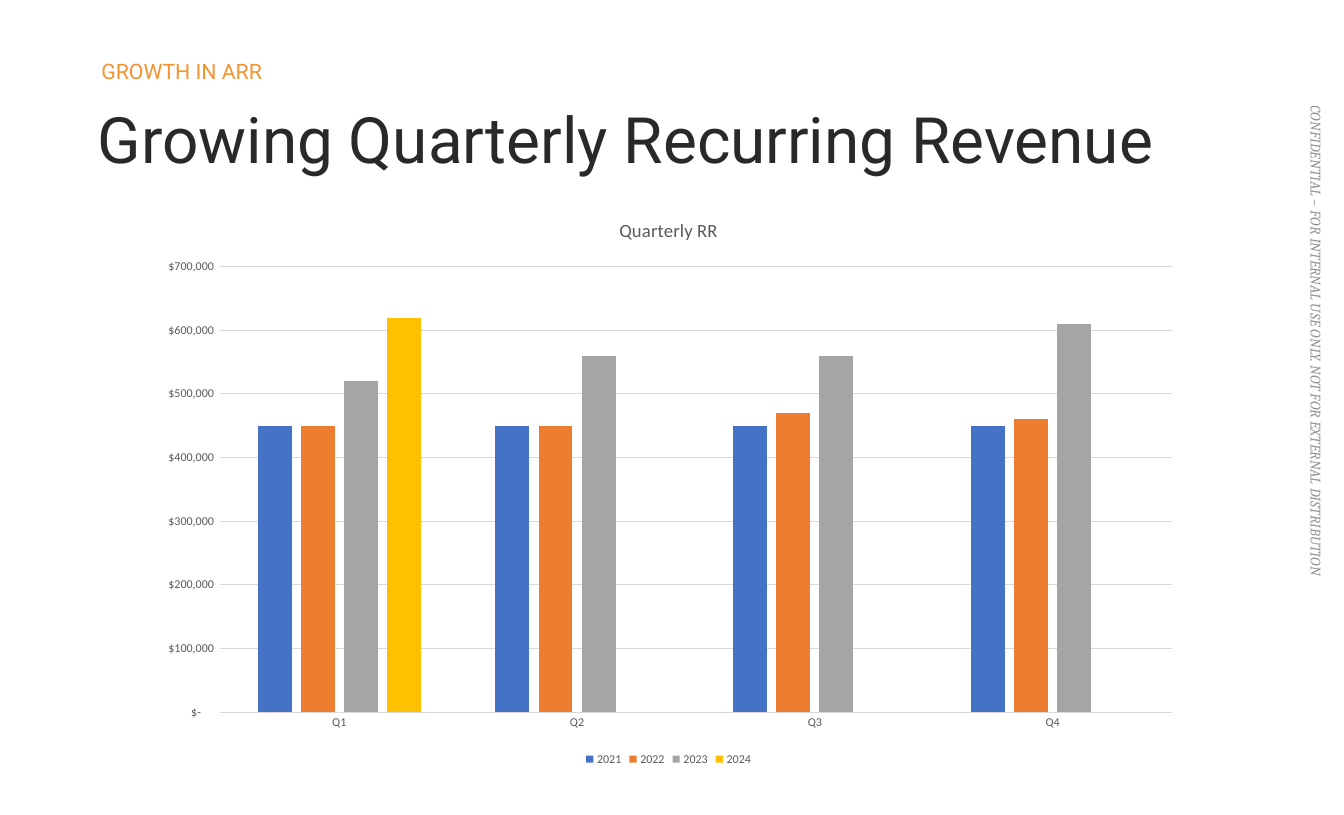
"""Build the quarterly recurring revenue slide."""
from dataclasses import dataclass

from lxml import etree
from pptx import Presentation
from pptx.chart.data import CategoryChartData
from pptx.dml.color import RGBColor
from pptx.enum.chart import XL_CHART_TYPE, XL_LEGEND_POSITION, XL_TICK_MARK
from pptx.enum.text import MSO_ANCHOR
from pptx.oxml.ns import qn
from pptx.util import Inches, Pt

COLUMN = XL_CHART_TYPE.COLUMN_CLUSTERED
BOTTOM = XL_LEGEND_POSITION.BOTTOM
NO_TICK = XL_TICK_MARK.NONE
TOP, BASE = MSO_ANCHOR.TOP, MSO_ANCHOR.BOTTOM
DOLLARS = '_("$"* #,##0_);_("$"* \\(#,##0\\);_("$"* "-"??_);_(@_)'

QUARTERS = ["Q1", "Q2", "Q3", "Q4"]
REVENUE = {
    "2021": [450000, 450000, 450000, 450000],
    "2022": [450000, 450000, 470000, 460000],
    "2023": [520000, 560000, 560000, 610000],
    "2024": [620000, None, None, None],
}


@dataclass(frozen=True)
class Theme:
    """Fonts, type sizes and colours of the slide."""
    heading: str = "Roboto"
    notice: str = "Cambria"
    chart: str = "Calibri"
    title_pt: int = 48
    kicker_pt: int = 16
    notice_pt: int = 11
    chart_title_pt: int = 14
    label_pt: int = 9
    ink: str = "292929"
    accent: str = "F59330"
    muted: str = "747475"
    label: str = "595959"
    grid: str = "D9D9D9"
    series: tuple = ("4472C4", "ED7D31", "A5A5A5", "FFC000")


def set_attrs(obj, **values):
    """Set each named attribute of an object."""
    for name, value in values.items():
        setattr(obj, name, value)


def set_font(font, name, size, color, **values):
    """Apply face, size, colour and further attributes to a font."""
    set_attrs(font, name=name, size=Pt(size), **values)
    font.color.rgb = RGBColor.from_string(color)


class Deck:
    """Hold the theme and slide, placing elements in percent of its size."""

    def __init__(self, theme, width, height):
        """Create a presentation with one blank slide."""
        self.theme = theme
        self.prs = Presentation()
        set_attrs(self.prs, slide_width=Inches(width), slide_height=Inches(height))
        self.slide = self.prs.slides.add_slide(self.prs.slide_layouts[6])

    def box(self, *shares):
        """Turn left, top, width and height in percent into lengths."""
        sizes = (self.prs.slide_width, self.prs.slide_height) * 2
        return [round(size * share / 100) for size, share in zip(sizes, shares)]

    def text(self, text, at, font, anchor=TOP, spacing=1.0, rotation=0, alpha=None):
        """Add a one-line text box."""
        sp = self.slide.shapes.add_textbox(*self.box(*at))
        sp.rotation = rotation
        tf = sp.text_frame
        set_attrs(tf, word_wrap=True, vertical_anchor=anchor)
        p = tf.paragraphs[0]
        p.line_spacing = spacing
        r = p.add_run()
        r.text = text
        set_font(r.font, **font)
        if alpha:
            color = r.font.fill._xPr.find(".//" + qn("a:srgbClr"))
            etree.SubElement(color, qn("a:alpha"), val=str(alpha * 1000))

    def column_chart(self, title, categories, series, at):
        """Add a clustered column chart with a title and legend."""
        t = self.theme
        data = CategoryChartData(number_format=DOLLARS)
        data.categories = categories
        for name, values in series.items():
            data.add_series(name, values)
        chart = self.slide.shapes.add_chart(COLUMN, *self.box(*at), data).chart
        label = {"name": t.chart, "size": t.label_pt, "color": t.label}
        set_font(chart.font, **label)

        set_attrs(chart, has_title=True, has_legend=True)
        chart.chart_title.include_in_layout = False
        tf = chart.chart_title.text_frame
        tf.text = title
        set_font(tf.paragraphs[0].runs[0].font, t.chart, t.chart_title_pt, t.label, bold=False)
        set_attrs(chart.legend, position=BOTTOM, include_in_layout=False)
        set_font(chart.legend.font, **label)

        plot = chart.plots[0]
        set_attrs(plot, gap_width=219, overlap=-27, vary_by_categories=False)
        for s, color in zip(plot.series, t.series):
            s.invert_if_negative = False
            s.format.fill.solid()
            s.format.fill.fore_color.rgb = RGBColor.from_string(color)

        cat, val = chart.category_axis, chart.value_axis
        for axis in (cat, val):
            set_attrs(axis, major_tick_mark=NO_TICK, minor_tick_mark=NO_TICK)
            set_font(axis.tick_labels.font, **label)
        set_attrs(val, minimum_scale=0, maximum_scale=700000, major_unit=100000,
                  has_major_gridlines=True)
        set_attrs(val.tick_labels, number_format=DOLLARS, number_format_is_linked=False)
        val.format.line.fill.background()
        for line in (cat.format.line, val.major_gridlines.format.line):
            line.width = Pt(0.75)
            line.color.rgb = RGBColor.from_string(t.grid)


def main():
    """Compose and save the slide."""
    t = Theme()
    deck = Deck(t, 14.02, 8.5)
    deck.text("CONFIDENTIAL – FOR INTERNAL USE ONLY. NOT FOR EXTERNAL DISTRIBUTION",
              (75.53, 47.06, 44.79, 3.41),
              {"name": t.notice, "size": t.notice_pt, "color": t.muted, "italic": True},
              rotation=90, alpha=76)
    deck.text("Growing Quarterly Recurring Revenue", (6.56, 12.71, 89.59, 8.82),
              {"name": t.heading, "size": t.title_pt, "color": t.ink}, spacing=0.9)
    deck.text("GROWTH IN ARR", (6.85, 5.65, 43.79, 5.29),
              {"name": t.heading, "size": t.kicker_pt, "color": t.accent},
              anchor=BASE, spacing=0.9)
    deck.column_chart("Quarterly RR", QUARTERS, REVENUE, (10.77, 24.24, 77.96, 70.24))
    deck.prs.save("out.pptx")


if __name__ == "__main__":
    main()
